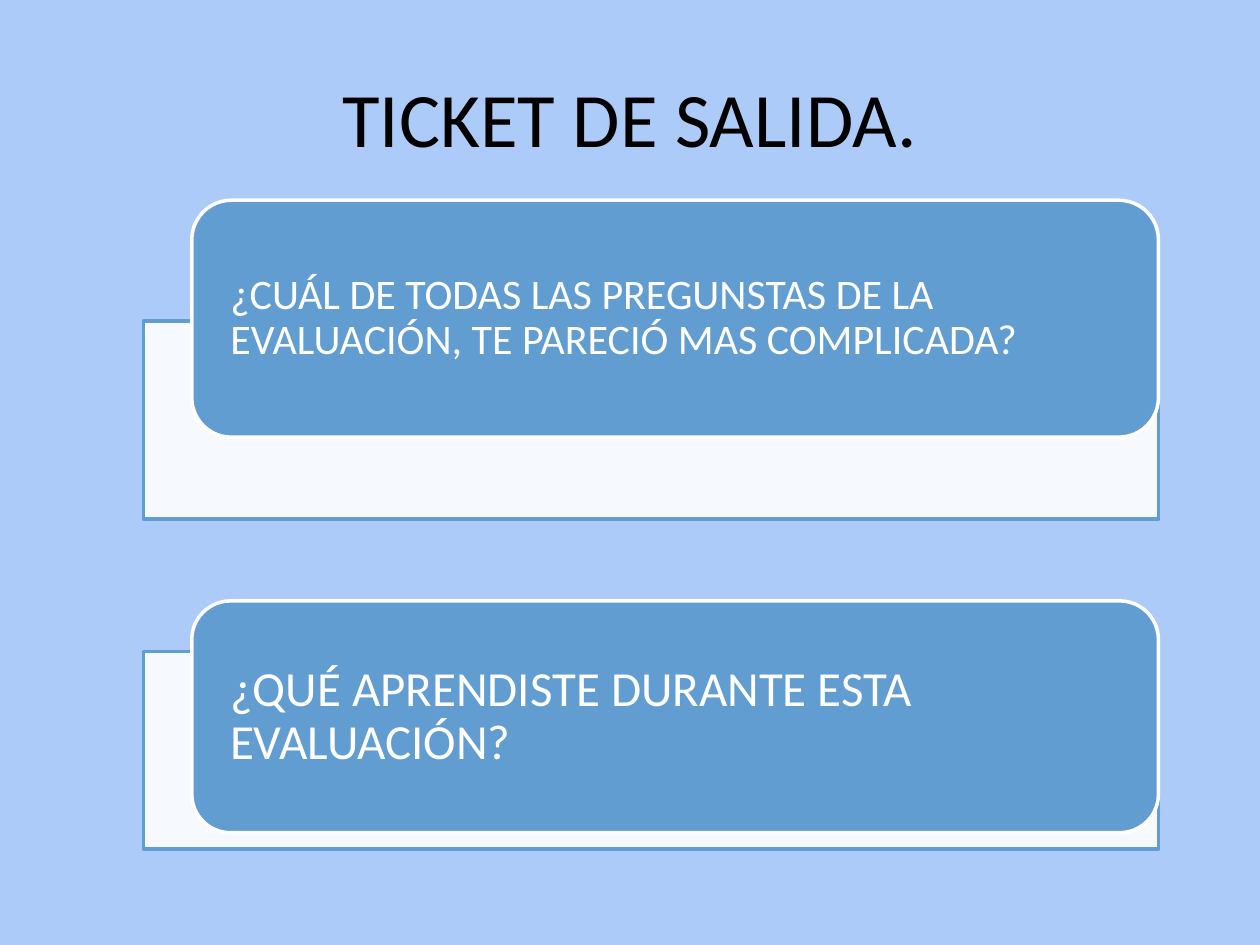
import pptx
import pptx.util
import pptx.dml.color
import pptx.enum.shapes
import pptx.enum.text
import pptx.oxml
import pptx.oxml.ns

Pt = pptx.util.Pt
SHAPE = pptx.enum.shapes.MSO_SHAPE
ALIGN = pptx.enum.text.PP_ALIGN
COLORS = {"background": "ACCBF9", "blue": "629DD1", "white": "FFFFFF", "title": "000000"}
FONT = "Calibri"
PANEL_HEIGHT = 113
INDENT = 27.6


def rgb(name):
    """Return the named colour."""
    return pptx.dml.color.RGBColor.from_string(COLORS[name])


def write(sp, text, size, color, align, inset):
    """Put one vertically centred paragraph into a shape."""
    tf = sp.text_frame
    tf.word_wrap = True
    tf.vertical_anchor = pptx.enum.text.MSO_ANCHOR.MIDDLE
    tf.margin_left = tf.margin_right = Pt(inset)
    tf.margin_top = tf.margin_bottom = 0
    p = tf.paragraphs[0]
    p.text = text
    p.alignment = align
    r = p.runs[0]
    r.font.name = FONT
    r.font.size = Pt(size)
    r.font.color.rgb = rgb(color)
    return p


def add_box(s, kind, left, top, width, height, fill, line):
    """Add a filled and outlined shape without shadow."""
    sp = s.shapes.add_shape(kind, Pt(left), Pt(top), Pt(width), Pt(height))
    sp.shadow.inherit = False
    sp.fill.solid()
    sp.fill.fore_color.rgb = rgb(fill)
    sp.line.color.rgb = rgb(line)
    sp.line.width = Pt(2)
    return sp


def add_title(s, left, top, width, height, text):
    """Add the slide heading."""
    sp = s.shapes.add_textbox(Pt(left), Pt(top), Pt(width), Pt(height))
    write(sp, text, 44, "title", ALIGN.CENTER, 7.2)


def add_question(s, left, top, width, height, label_height, text, size):
    """Add a question label over the answer panel at the foot of its box."""
    panel = add_box(s, SHAPE.RECTANGLE, left, top + height - PANEL_HEIGHT,
                    width, PANEL_HEIGHT, "white", "blue")
    color = panel.fill._xPr.find(".//" + pptx.oxml.ns.qn("a:srgbClr"))
    color.append(pptx.oxml.parse_xml(
        f'<a:alpha {pptx.oxml.ns.nsdecls("a")} val="90000"/>'))
    label = add_box(s, SHAPE.ROUNDED_RECTANGLE, left + INDENT, top,
                    width - INDENT, label_height, "blue", "white")
    p = write(label, text, size, "white", ALIGN.LEFT, 15.4)
    p.line_spacing = 0.9


def main():
    """Build and save the exit ticket slide."""
    prs = pptx.Presentation()
    prs.slide_width, prs.slide_height = Pt(720), Pt(540)
    s = prs.slides.add_slide(prs.slide_layouts[6])
    s.background.fill.solid()
    s.background.fill.fore_color.rgb = rgb("background")
    add_title(s, 36, 21.6, 648, 90, "TICKET DE SALIDA.")
    add_question(s, 82, 114.4, 580, 182.2, 135.4,
                 "¿CUÁL DE TODAS LAS PREGUNSTAS DE LA EVALUACIÓN, TE PARECIÓ MAS COMPLICADA?", 24)
    add_question(s, 82, 343.4, 580, 141.8, 132.5,
                 "¿QUÉ APRENDISTE DURANTE ESTA EVALUACIÓN?", 28)
    prs.save("out.pptx")


if __name__ == "__main__":
    main()
